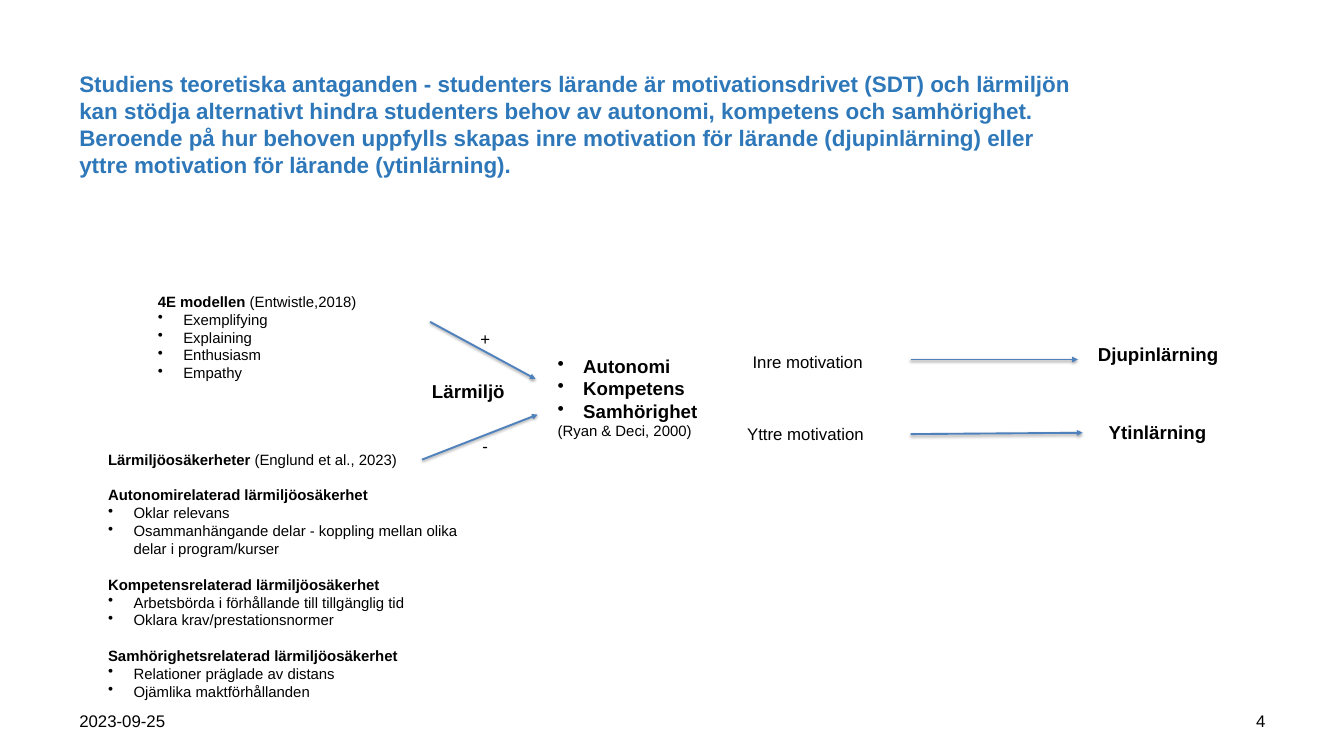
"""Build the slide on learning environment, motivation and depth of learning."""
from dataclasses import dataclass

import lxml.etree
import pptx
import pptx.dml.color
import pptx.enum.shapes
import pptx.enum.text
import pptx.oxml
import pptx.oxml.ns
import pptx.util

SCALE = 9144
BLACK = pptx.dml.color.RGBColor(0x00, 0x00, 0x00)
TITLE = pptx.dml.color.RGBColor(0x2E, 0x78, 0xBA)
ARROW = pptx.dml.color.RGBColor(0x4F, 0x81, 0xBD)
FONT = "Arial"
INDENT = 38
GAP = 19
LEFT = pptx.enum.text.PP_ALIGN.LEFT
RIGHT = pptx.enum.text.PP_ALIGN.RIGHT
SHADOW = (
    f'<a:effectLst {pptx.oxml.ns.nsdecls("a")}>'
    '<a:outerShdw blurRad="40000" dist="20000" dir="5400000" rotWithShape="0">'
    '<a:srgbClr val="000000"><a:alpha val="38000"/></a:srgbClr>'
    "</a:outerShdw></a:effectLst>"
)


@dataclass(frozen=True)
class Line:
    bold: str = ""
    plain: str = ""
    dot: bool = False
    gap: int = 0
    size: int = 16


@dataclass(frozen=True)
class Box:
    left: int
    top: int
    width: int
    height: int
    lines: tuple[Line, ...]
    color: pptx.dml.color.RGBColor = BLACK
    align: pptx.enum.text.PP_ALIGN = LEFT
    wrap: bool = True
    frame: bool = False


@dataclass(frozen=True)
class Arrow:
    x1: int
    y1: int
    x2: int
    y2: int


def px(value: int) -> int:
    """Turn px into EMU."""
    return value * SCALE


def dots(*texts: str) -> tuple[Line, ...]:
    """Make plain bullet lines."""
    return tuple(Line(plain=text, dot=True) for text in texts)


def label(text: str, size: int = 18) -> tuple[Line, ...]:
    """Make one plain line."""
    return (Line(plain=text, size=size),)


def head(text: str, size: int = 20) -> tuple[Line, ...]:
    """Make one bold line."""
    return (Line(bold=text, size=size),)


BOXES = (
    Box(100, 95, 1516, 180, head(
        "Studiens teoretiska antaganden - studenters lärande är motivationsdrivet (SDT) "
        "och lärmiljön kan stödja alternativt hindra studenters behov av autonomi, "
        "kompetens och samhörighet. Beroende på hur behoven uppfylls skapas inre "
        "motivation för lärande (djupinlärning) eller yttre motivation för lärande "
        "(ytinlärning).", 24), color=TITLE, frame=True),
    Box(100, 1043, 467, 60, label("2023-09-25"), frame=True),
    Box(1434, 1043, 467, 60, label("4"), align=RIGHT, frame=True),
    Box(820, 523, 286, 138, tuple(
        Line(bold=need, dot=True, size=20) for need in ("Autonomi", "Kompetens", "Samhörighet")
    ) + label("(Ryan & Deci, 2000)", 16)),
    Box(225, 430, 503, 145, (
        Line("4E modellen ", "(Entwistle,2018)"),
        *dots("Exemplifying", "Explaining", "Enthusiasm", "Empathy"),
    )),
    Box(151, 665, 551, 417, (
        Line("Lärmiljöosäkerheter", " (Englund et al., 2023)"),
        Line("Autonomirelaterad lärmiljöosäkerhet", gap=GAP),
        *dots("Oklar relevans",
              "Osammanhängande delar - koppling mellan olika delar i program/kurser"),
        Line("Kompetensrelaterad lärmiljöosäkerhet", gap=GAP),
        *dots("Arbetsbörda i förhållande till tillgänglig tid", "Oklara krav/prestationsnormer"),
        Line("Samhörighetsrelaterad lärmiljöosäkerhet", gap=GAP),
        *dots("Relationer präglade av distans", "Ojämlika maktförhållanden"),
    )),
    Box(705, 484, 35, 40, label("+"), wrap=False),
    Box(708, 644, 29, 40, label("-"), wrap=False),
    Box(1624, 506, 204, 44, head("Djupinlärning")),
    Box(1640, 621, 204, 44, head("Ytinlärning")),
    Box(633, 560, 231, 44, head("Lärmiljö")),
    Box(1102, 625, 196, 40, label("Yttre motivation"), wrap=False),
    Box(1110, 518, 186, 40, label("Inre motivation"), wrap=False),
)

ARROWS = (
    Arrow(640, 479, 797, 564),
    Arrow(628, 684, 800, 617),
    Arrow(1355, 535, 1604, 535),
    Arrow(1355, 646, 1611, 644),
)


def write(para, line: Line, box: Box) -> None:
    """Fill one paragraph."""
    para.alignment = box.align
    if line.gap:
        para.space_before = pptx.util.Pt(line.gap)
    if line.dot:
        props = para._p.get_or_add_pPr()
        props.set("marL", str(px(INDENT)))
        props.set("indent", str(-px(INDENT)))
        bullet = lxml.etree.SubElement(props, pptx.oxml.ns.qn("a:buChar"))
        bullet.set("char", "•")
    for text, bold in ((line.bold, True), (line.plain, False)):
        if text:
            run = para.add_run()
            run.text = text
            run.font.name = FONT
            run.font.size = pptx.util.Pt(line.size)
            run.font.bold = bold
            run.font.color.rgb = box.color


def draw_box(slide, box: Box) -> None:
    """Draw one text box."""
    shape = slide.shapes.add_textbox(
        px(box.left), px(box.top), px(box.width), px(box.height))
    frame = shape.text_frame
    frame.word_wrap = box.wrap
    if box.frame:
        frame.vertical_anchor = pptx.enum.text.MSO_ANCHOR.MIDDLE
        frame.margin_left = frame.margin_right = px(18)
        frame.margin_top = frame.margin_bottom = px(9)
    for index, line in enumerate(box.lines):
        para = frame.add_paragraph() if index else frame.paragraphs[0]
        write(para, line, box)


def draw_arrow(slide, arrow: Arrow) -> None:
    """Draw one arrow with a soft shadow."""
    shape = slide.shapes.add_connector(
        pptx.enum.shapes.MSO_CONNECTOR.STRAIGHT,
        px(arrow.x1), px(arrow.y1), px(arrow.x2), px(arrow.y2))
    shape.line.color.rgb = ARROW
    shape.line.width = pptx.util.Pt(2)
    tip = lxml.etree.SubElement(shape.line._get_or_add_ln(), pptx.oxml.ns.qn("a:tailEnd"))
    tip.set("type", "triangle")
    shape._element.spPr.append(pptx.oxml.parse_xml(SHADOW))


def main() -> None:
    """Build and save the slide."""
    deck = pptx.Presentation()
    deck.slide_width = px(2000)
    deck.slide_height = px(1125)
    slide = deck.slides.add_slide(deck.slide_layouts[6])
    for box in BOXES:
        draw_box(slide, box)
    for arrow in ARROWS:
        draw_arrow(slide, arrow)
    deck.save("out.pptx")


if __name__ == "__main__":
    main()
